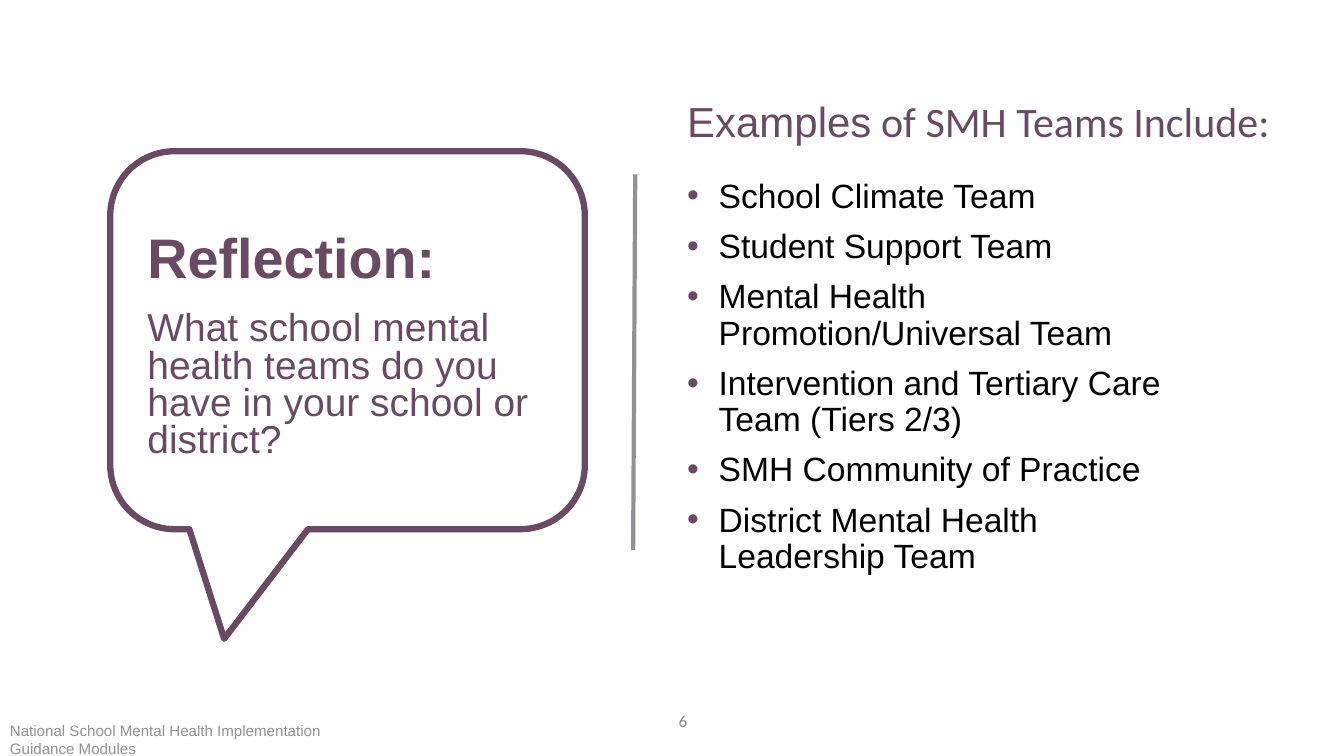
"""Builds the slide on school mental health teams."""
import dataclasses

import lxml.etree
import pptx
import pptx.dml.color
import pptx.enum.shapes
import pptx.enum.text
import pptx.oxml.ns
import pptx.util

ALIGN = pptx.enum.text.PP_ALIGN
ANCHOR = pptx.enum.text.MSO_ANCHOR
TEAMS = [
    "School Climate Team",
    "Student Support Team",
    "Mental Health Promotion/Universal Team",
    "Intervention and Tertiary Care Team (Tiers 2/3)",
    "SMH Community of Practice",
    "District Mental Health Leadership Team",
]


@dataclasses.dataclass(frozen=True)
class Theme:
    plum: str = "6A4A62"
    black: str = "000000"
    rule_grey: str = "919195"
    number_grey: str = "8C8C8C"
    sans: str = "Arial"
    humanist: str = "Calibri"
    reflection: float = 39.8
    question: float = 27.8
    heading: float = 30
    team: float = 24
    number: float = 12
    footer: float = 10.8


THEME = Theme()


def px(length):
    return pptx.util.Emu(length * 9525)


def rgb(color):
    return pptx.dml.color.RGBColor.from_string(color)


def add_text_frame(slide, left, top, width, height, anchor=ANCHOR.TOP):
    box = slide.shapes.add_textbox(px(left), px(top), px(width), px(height))
    frame = box.text_frame
    frame.word_wrap = True
    frame.vertical_anchor = anchor
    return frame


def add_paragraph(frame, first, line=1.0, before=0, after=0, align=ALIGN.LEFT):
    paragraph = frame.paragraphs[0] if first else frame.add_paragraph()
    paragraph.alignment = align
    paragraph.line_spacing = line
    paragraph.space_before = pptx.util.Pt(0 if first else before)
    paragraph.space_after = pptx.util.Pt(after)
    return paragraph


def add_run(paragraph, words, size, color, font=THEME.sans, bold=False):
    run = paragraph.add_run()
    run.text = words
    run.font.size = pptx.util.Pt(size)
    run.font.name = font
    run.font.bold = bold
    run.font.color.rgb = rgb(color)


def add_bullet(paragraph, color, indent):
    qn = pptx.oxml.ns.qn
    properties = paragraph._p.get_or_add_pPr()
    properties.set("marL", str(px(indent)))
    properties.set("indent", str(-px(indent)))
    bullet_color = lxml.etree.SubElement(properties, qn("a:buClr"))
    lxml.etree.SubElement(bullet_color, qn("a:srgbClr"), val=color)
    lxml.etree.SubElement(properties, qn("a:buFont"), typeface=THEME.sans)
    lxml.etree.SubElement(properties, qn("a:buChar"), char="•")


def add_callout(slide, left, top, width, height):
    callout = slide.shapes.add_shape(
        pptx.enum.shapes.MSO_SHAPE.ROUNDED_RECTANGULAR_CALLOUT,
        px(left), px(top), px(width), px(height))
    for index, value in enumerate((-0.26, 0.79, 0.17)):
        callout.adjustments[index] = value
    callout.shadow.inherit = False
    callout.fill.background()
    callout.line.color.rgb = rgb(THEME.plum)
    callout.line.width = pptx.util.Pt(4.5)


def add_divider(slide, *ends):
    divider = slide.shapes.add_connector(
        pptx.enum.shapes.MSO_CONNECTOR.STRAIGHT, *map(px, ends))
    divider.line.color.rgb = rgb(THEME.rule_grey)
    divider.line.width = pptx.util.Pt(3)
    lxml.etree.SubElement(
        divider._element.spPr, pptx.oxml.ns.qn("a:effectLst"))


def add_reflection(slide):
    add_callout(slide, 105, 144, 452, 360)
    frame = add_text_frame(slide, 131, 220, 427, 232)
    title = add_paragraph(frame, True, line=0.8, after=6)
    add_run(title, "Reflection:", THEME.reflection, THEME.plum, bold=True)
    question = add_paragraph(frame, False, line=0.8, before=10)
    add_run(question,
            "What school mental health teams do you have in your school or district?",
            THEME.question, THEME.plum)


def add_examples(slide):
    frame = add_text_frame(slide, 645, 77, 605, 68)
    heading = add_paragraph(frame, True, line=1.2, after=12)
    add_run(heading, "Examples", THEME.heading, THEME.plum)
    add_run(heading, " of SMH Teams Include:", THEME.heading, THEME.plum,
            THEME.humanist)
    frame = add_text_frame(slide, 645, 166, 504, 391)
    for index, team in enumerate(TEAMS):
        entry = add_paragraph(frame, index == 0, line=0.9, before=10)
        add_bullet(entry, THEME.plum, 30)
        add_run(entry, team, THEME.team, THEME.black)


def add_footer(slide):
    frame = add_text_frame(slide, 376, 667, 288, 38, ANCHOR.MIDDLE)
    number = add_paragraph(frame, True, align=ALIGN.RIGHT)
    add_run(number, "6", THEME.number, THEME.number_grey, THEME.humanist)
    frame = add_text_frame(slide, 0, 682, 366, 38)
    source = add_paragraph(frame, True)
    add_run(source, "National School Mental Health Implementation Guidance Modules",
            THEME.footer, THEME.rule_grey)


def main():
    deck = pptx.Presentation()
    deck.slide_width, deck.slide_height = px(1280), px(720)
    slide = deck.slides.add_slide(deck.slide_layouts[6])
    add_reflection(slide)
    add_examples(slide)
    add_divider(slide, 605, 166, 603, 524)
    add_footer(slide)
    deck.save("out.pptx")


if __name__ == "__main__":
    main()
